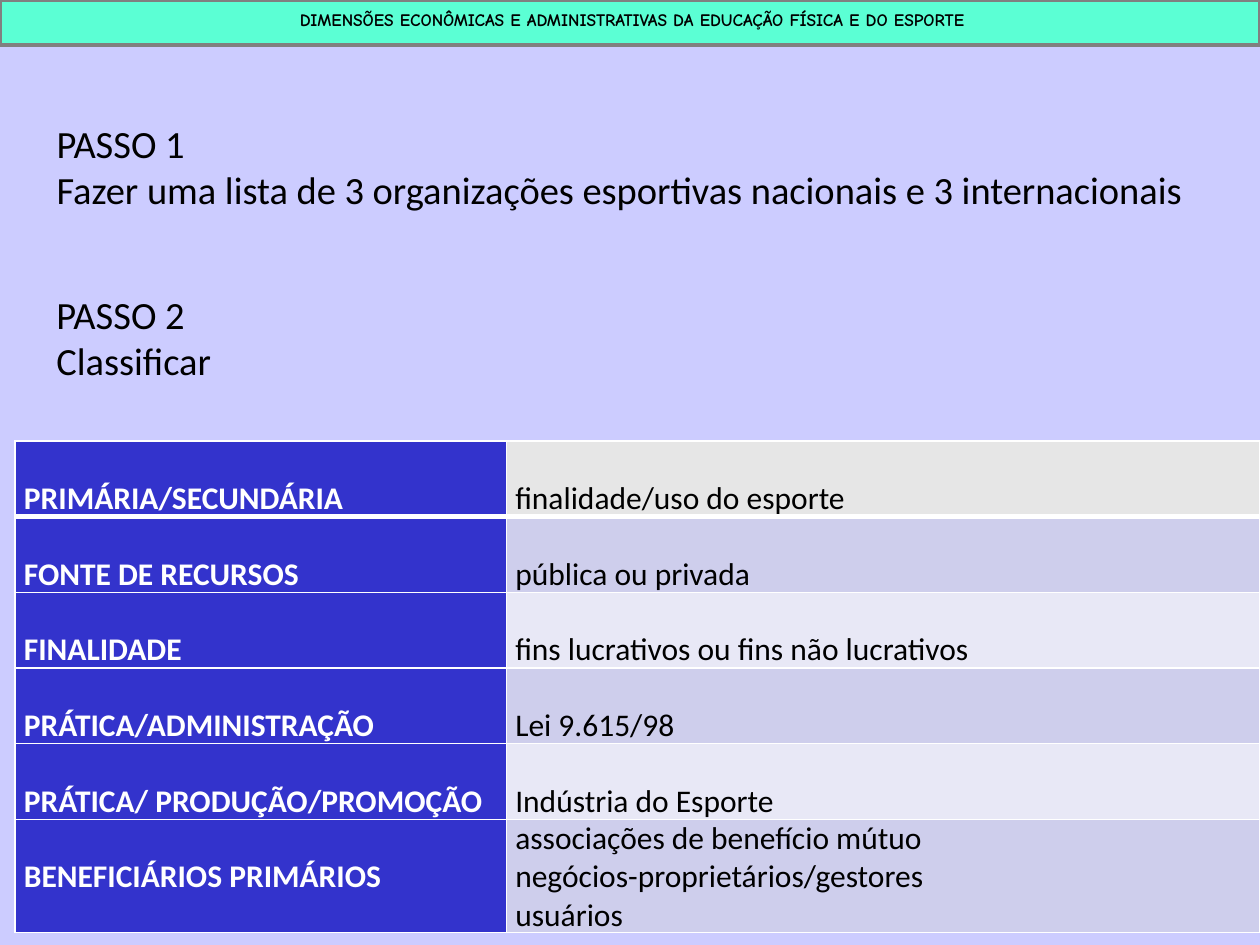
import pptx
import pptx.dml.color
import pptx.enum.shapes
import pptx.enum.text
import pptx.oxml
import pptx.oxml.ns
import pptx.util

# Content
TITLE = "DIMENSÕES ECONÔMICAS E ADMINISTRATIVAS DA EDUCAÇÃO FÍSICA E DO ESPORTE"
FIRST_STEP = ["PASSO 1",
              "Fazer uma lista de 3 organizações esportivas nacionais e 3 internacionais"]
SECOND_STEP = ["PASSO 2", "Classificar"]
CRITERIA = [
    ("PRIMÁRIA/SECUNDÁRIA", ["finalidade/uso do esporte"]),
    ("FONTE DE RECURSOS", ["pública ou privada"]),
    ("FINALIDADE", ["fins lucrativos ou fins não lucrativos"]),
    ("PRÁTICA/ADMINISTRAÇÃO", ["Lei 9.615/98"]),
    ("PRÁTICA/ PRODUÇÃO/PROMOÇÃO", ["Indústria do Esporte"]),
    ("BENEFICIÁRIOS PRIMÁRIOS", ["associações de benefício mútuo",
                                 "negócios-proprietários/gestores", "usuários"]),
]

# Layout, in inches
WIDTH, HEIGHT = 10, 7.5
LEFT_MARGIN = 0.35
STEPS = [(FIRST_STEP, 0.9, WIDTH - LEFT_MARGIN), (SECOND_STEP, 2.26, 2.44)]
TABLE_LEFT, TABLE_TOP = 0.12, 3.5
LABEL_WIDTH = 3.9
COLUMNS = [LABEL_WIDTH, WIDTH - TABLE_LEFT - LABEL_WIDTH]
ROW_HEIGHT, LAST_ROW_HEIGHT = 0.6, 0.9

LABEL_FILL, HEADER_FILL = "3333CC", "E6E6E6"
BAND_FILLS = ["E8E8F6", "CECEEC"]
BLACK, WHITE = "000000", "FFFFFF"


def paint(fill, color):
    fill.solid()
    fill.fore_color.rgb = pptx.dml.color.RGBColor.from_string(color)


def inches(*lengths):
    return [pptx.util.Inches(length) for length in lengths]


def write(frame, lines, size, font, color, bold=False, spacing=None):
    for index, line in enumerate(lines):
        para = frame.add_paragraph() if index else frame.paragraphs[0]
        para.line_spacing = spacing
        span = para.add_run()
        span.text = line
        span.font.size = pptx.util.Pt(size)
        span.font.name = font
        span.font.bold = bold
        paint(span.font.fill, color)


def add_borders(cell, top, bottom):
    properties = cell._tc.get_or_add_tcPr()
    for side, points in (("L", 1), ("R", 1), ("T", top), ("B", bottom)):
        properties.append(pptx.oxml.parse_xml(
            f'<a:ln{side} {pptx.oxml.ns.nsdecls("a")} w="{pptx.util.Pt(points)}">'
            f'<a:solidFill><a:srgbClr val="{WHITE}"/></a:solidFill></a:ln{side}>'))


def add_banner(page):
    title = page.shapes.title
    title.left, title.top, title.width, title.height = inches(LEFT_MARGIN, 0.05, 9.33, 0.24)
    frame = title.text_frame
    frame.auto_size = pptx.enum.text.MSO_AUTO_SIZE.SHAPE_TO_FIT_TEXT
    frame.vertical_anchor = pptx.enum.text.MSO_ANCHOR.TOP
    write(frame, [TITLE], 10, "Comic Neue", BLACK, True, 0.8)
    frame.paragraphs[0].alignment = pptx.enum.text.PP_ALIGN.CENTER
    frame.paragraphs[0].space_before = pptx.util.Pt(5)

    banner = page.shapes.add_shape(pptx.enum.shapes.MSO_SHAPE.RECTANGLE,
                                   *inches(0, 0, WIDTH, 0.36))
    banner.shadow.inherit = False
    paint(banner.fill, "5BFFD4")
    paint(banner.line.fill, "808080")
    banner.line.width = pptx.util.Pt(2)
    title.element.addprevious(banner.element)  # banner goes behind the title


def add_step(page, lines, top, width):
    box = page.shapes.add_textbox(*inches(LEFT_MARGIN, top, width, 0.84))
    box.text_frame.word_wrap = True
    box.text_frame.auto_size = pptx.enum.text.MSO_AUTO_SIZE.SHAPE_TO_FIT_TEXT
    write(box.text_frame, lines, 22, "Calibri", BLACK)


def add_criteria(page):
    heights = [ROW_HEIGHT] * (len(CRITERIA) - 1) + [LAST_ROW_HEIGHT]
    table = page.shapes.add_table(
        len(CRITERIA), len(COLUMNS),
        *inches(TABLE_LEFT, TABLE_TOP, sum(COLUMNS), sum(heights))).table
    for column, width in zip(table.columns, COLUMNS):
        column.width = pptx.util.Inches(width)
    for row, (label, details) in enumerate(CRITERIA):
        table.rows[row].height = pptx.util.Inches(heights[row])
        detail_fill = BAND_FILLS[row % 2] if row else HEADER_FILL
        cells = [([label], WHITE, True, LABEL_FILL), (details, BLACK, False, detail_fill)]
        for column, (lines, color, bold, fill) in enumerate(cells):
            cell = table.cell(row, column)
            cell.margin_left = cell.margin_right = pptx.util.Inches(0.07)
            cell.margin_top = cell.margin_bottom = 0
            add_borders(cell, 3 if row == 1 else 1, 3 if row == 0 else 1)
            paint(cell.fill, fill)
            spacing = 2.0 if len(lines) == 1 else None
            write(cell.text_frame, lines, 18, "Calibri", color, bold, spacing)


def main():
    deck = pptx.Presentation()
    deck.slide_width, deck.slide_height = inches(WIDTH, HEIGHT)
    page = deck.slides.add_slide(deck.slide_layouts[5])
    paint(page.background.fill, "CCCCFF")
    add_banner(page)
    add_criteria(page)
    for step in STEPS:
        add_step(page, *step)
    deck.save("out.pptx")


if __name__ == "__main__":
    main()
